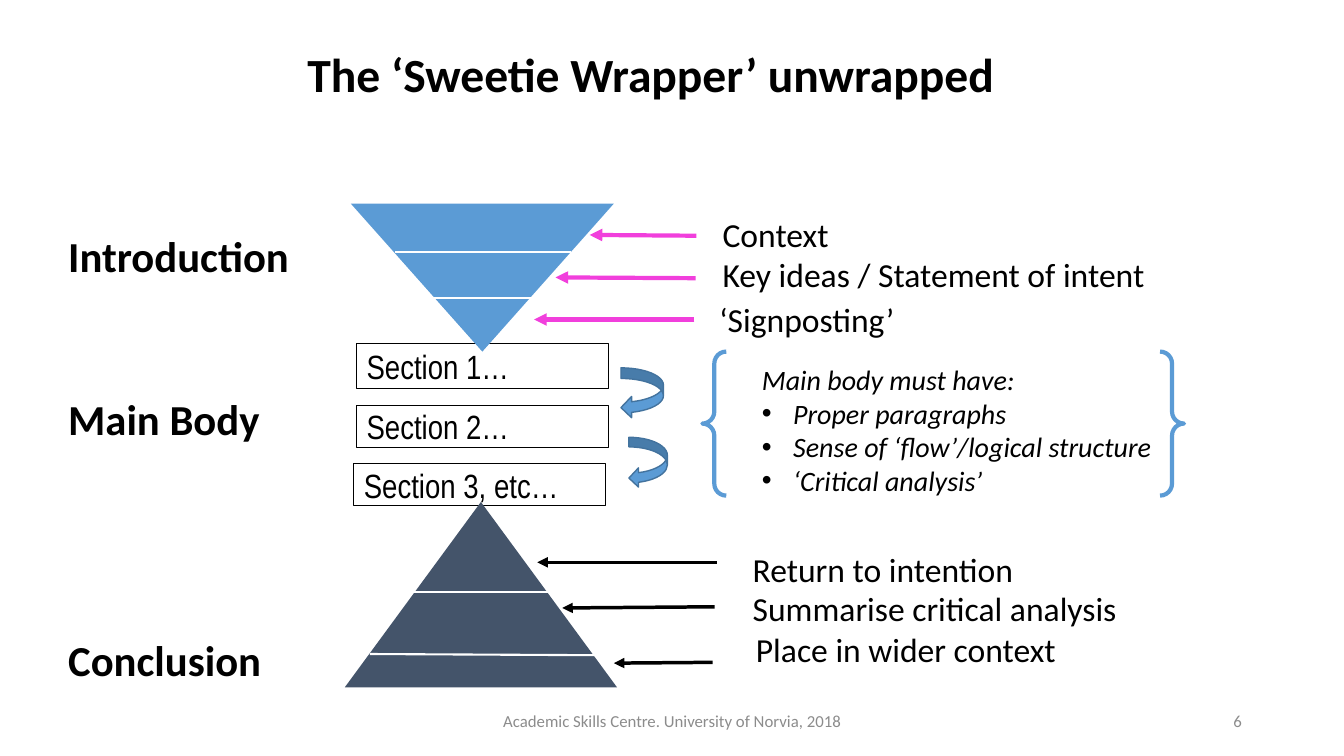
from dataclasses import dataclass

import pptx
import pptx.dml.color
import pptx.enum.shapes
import pptx.enum.text
import pptx.oxml
import pptx.oxml.ns
import pptx.util

Cm = pptx.util.Cm
Pt = pptx.util.Pt
SHAPE = pptx.enum.shapes.MSO_SHAPE
ALIGN = pptx.enum.text.PP_ALIGN
ANCHOR = pptx.enum.text.MSO_ANCHOR

BLACK, WHITE, GREY = "000000", "FFFFFF", "8C8C8C"
BLUE, DARK_BLUE, SLATE, PINK = "5B9BD5", "43739E", "44546A", "F13FDC"


@dataclass(frozen=True)
class Box:
    left: float
    top: float
    width: float
    height: float

    def emu(self) -> tuple:
        return Cm(self.left), Cm(self.top), Cm(self.width), Cm(self.height)


@dataclass(frozen=True)
class Style:
    size: float
    color: str = BLACK
    font: str = "Calibri"
    bold: bool = False
    italic: bool = False
    align: ALIGN = ALIGN.LEFT


@dataclass(frozen=True)
class Label:
    text: str
    box: Box
    style: Style


@dataclass(frozen=True)
class Figure:
    kind: SHAPE
    box: Box
    fill: str = ""
    line: str = ""
    weight: float = 1
    rotation: float = 0


@dataclass(frozen=True)
class Stroke:
    start: tuple[float, float]
    end: tuple[float, float]
    color: str
    weight: float
    arrow: bool = False


def rgb(color: str) -> pptx.dml.color.RGBColor:
    return pptx.dml.color.RGBColor.from_string(color)


def write(shape, text: str, style: Style) -> None:
    """Put vertically centred text into a shape and format its runs."""
    frame = shape.text_frame
    frame.text = text
    frame.word_wrap = True
    frame.vertical_anchor = ANCHOR.MIDDLE
    for paragraph in frame.paragraphs:
        paragraph.alignment = style.align
        for run in paragraph.runs:
            run.font.name = style.font
            run.font.size = Pt(style.size)
            run.font.bold = style.bold
            run.font.italic = style.italic
            run.font.color.rgb = rgb(style.color)


def add_label(slide, label: Label):
    textbox = slide.shapes.add_textbox(*label.box.emu())
    write(textbox, label.text, label.style)
    return textbox


def add_figure(slide, figure: Figure):
    shape = slide.shapes.add_shape(figure.kind, *figure.box.emu())
    shape.shadow.inherit = False
    shape.rotation = figure.rotation
    if figure.fill:
        shape.fill.solid()
        shape.fill.fore_color.rgb = rgb(figure.fill)
    else:
        shape.fill.background()
    if figure.line:
        shape.line.color.rgb = rgb(figure.line)
        shape.line.width = Pt(figure.weight)
    else:
        shape.line.fill.background()
    return shape


def add_stroke(slide, stroke: Stroke) -> None:
    ends = [Cm(value) for value in (*stroke.start, *stroke.end)]
    connector = slide.shapes.add_connector(
        pptx.enum.shapes.MSO_CONNECTOR.STRAIGHT, *ends)
    connector.line.color.rgb = rgb(stroke.color)
    connector.line.width = Pt(stroke.weight)
    if stroke.arrow:
        head = pptx.oxml.parse_xml(
            f'<a:tailEnd {pptx.oxml.ns.nsdecls("a")} type="triangle"/>')
        connector.line._get_or_add_ln().append(head)
    connector._element.spPr.append(
        pptx.oxml.parse_xml(f'<a:effectLst {pptx.oxml.ns.nsdecls("a")}/>'))


def add_bullet(paragraph) -> None:
    properties = paragraph._p.get_or_add_pPr()
    indent = Cm(0.79)
    properties.set("marL", str(indent))
    properties.set("indent", str(-indent))
    for tag, value in (("buFont", 'typeface="Arial"'), ("buChar", 'char="•"')):
        properties.append(pptx.oxml.parse_xml(
            f'<a:{tag} {pptx.oxml.ns.nsdecls("a")} {value}/>'))


HEADING = Style(30.5, bold=True)
POINT = Style(24)
SECTION = Style(24, font="Arial Narrow")

PARTS = [("Introduction", 6.43), ("Main Body", 10.54), ("Conclusion", 16.61)]
POINTS = [
    ("Context", 17.96, 5.89),
    ("Key ideas / Statement of intent", 17.96, 6.91),
    ("‘Signposting’", 17.88, 8.05),
    ("Return to intention", 18.72, 14.33),
    ("Summarise critical analysis", 18.72, 15.32),
    ("Place in wider context", 18.8, 16.36),
]
SECTIONS = [
    ("Section 1…", Box(8.99, 8.66, 6.35, 1.12)),
    ("Section 2…", Box(8.99, 10.21, 6.35, 1.07)),
    ("Section 3, etc…", Box(8.92, 11.68, 6.35, 1.07)),
]
WRAPPER = [
    Figure(SHAPE.ISOSCELES_TRIANGLE, Box(8.69, 12.65, 6.86, 4.67), SLATE),
    Figure(SHAPE.ISOSCELES_TRIANGLE, Box(8.84, 5.13, 6.63, 3.73), BLUE,
           rotation=180),
    Figure(SHAPE.CURVED_LEFT_ARROW, Box(15.65, 9.27, 1.07, 1.27), BLUE, DARK_BLUE),
    Figure(SHAPE.CURVED_LEFT_ARROW, Box(15.85, 11.02, 0.97, 1.27), BLUE, DARK_BLUE),
    Figure(SHAPE.DOUBLE_BRACE, Box(17.7, 8.86, 12.14, 3.63), line=BLUE, weight=3),
]
DIVIDERS = [
    ((9.96, 6.35), (14.4, 6.35)),
    ((10.74, 7.52), (13.54, 7.52)),
    ((10.39, 14.91), (13.84, 14.91)),
    ((9.32, 16.48), (15.01, 16.51)),
]
INTRODUCTION_ARROWS = [
    ((17.55, 5.94), (14.86, 5.92)),
    ((17.53, 7.01), (14, 6.99)),
    ((17.5, 8.05), (13.46, 8.05)),
]
CONCLUSION_ARROWS = [
    ((18.06, 14.17), (13.54, 14.17)),
    ((18.01, 15.29), (14.17, 15.32)),
    ((17.96, 16.69), (15.47, 16.71)),
]
STROKES = (
    [Stroke(*ends, WHITE, 1.5) for ends in DIVIDERS]
    + [Stroke(*ends, PINK, 3, True) for ends in INTRODUCTION_ARROWS]
    + [Stroke(*ends, BLACK, 2.5, True) for ends in CONCLUSION_ARROWS]
)
LABELS = (
    [Label(text, Box(1.47, middle - 0.65, 7, 1.3), HEADING) for text, middle in PARTS]
    + [Label(text, Box(left, middle - 0.54, 12.9, 1.08), POINT)
       for text, left, middle in POINTS]
    + [Label("Academic Skills Centre. University of Norvia, 2018",
             Box(11.23, 17.65, 11.43, 1.02), Style(12, GREY, align=ALIGN.CENTER)),
       Label("6", Box(23.93, 17.65, 7.62, 1.02), Style(12, GREY, align=ALIGN.RIGHT))]
)
MAIN_BODY = Label(
    "Main body must have:\nProper paragraphs\n"
    "Sense of ‘flow’/logical structure\n‘Critical analysis’",
    Box(18.95, 8.99, 13.23, 3.68), Style(20, italic=True))


def main() -> None:
    deck = pptx.Presentation()
    deck.slide_width, deck.slide_height = Cm(33.87), Cm(19.05)
    slide = deck.slides.add_slide(deck.slide_layouts[5])

    title = slide.shapes.title
    title.left, title.top, title.width, title.height = Box(5.92, 0.91, 20.96, 1.88).emu()
    write(title, "The ‘Sweetie Wrapper’ unwrapped",
          Style(34, bold=True, align=ALIGN.CENTER))

    for text, box in SECTIONS:
        section = add_figure(slide, Figure(SHAPE.RECTANGLE, box, WHITE, BLACK, 0.75))
        write(section, text, SECTION)
    for figure in WRAPPER:
        add_figure(slide, figure)
    for stroke in STROKES:
        add_stroke(slide, stroke)
    for label in LABELS:
        add_label(slide, label)
    requirements = add_label(slide, MAIN_BODY)
    for paragraph in requirements.text_frame.paragraphs[1:]:
        add_bullet(paragraph)

    deck.save("out.pptx")


if __name__ == "__main__":
    main()
